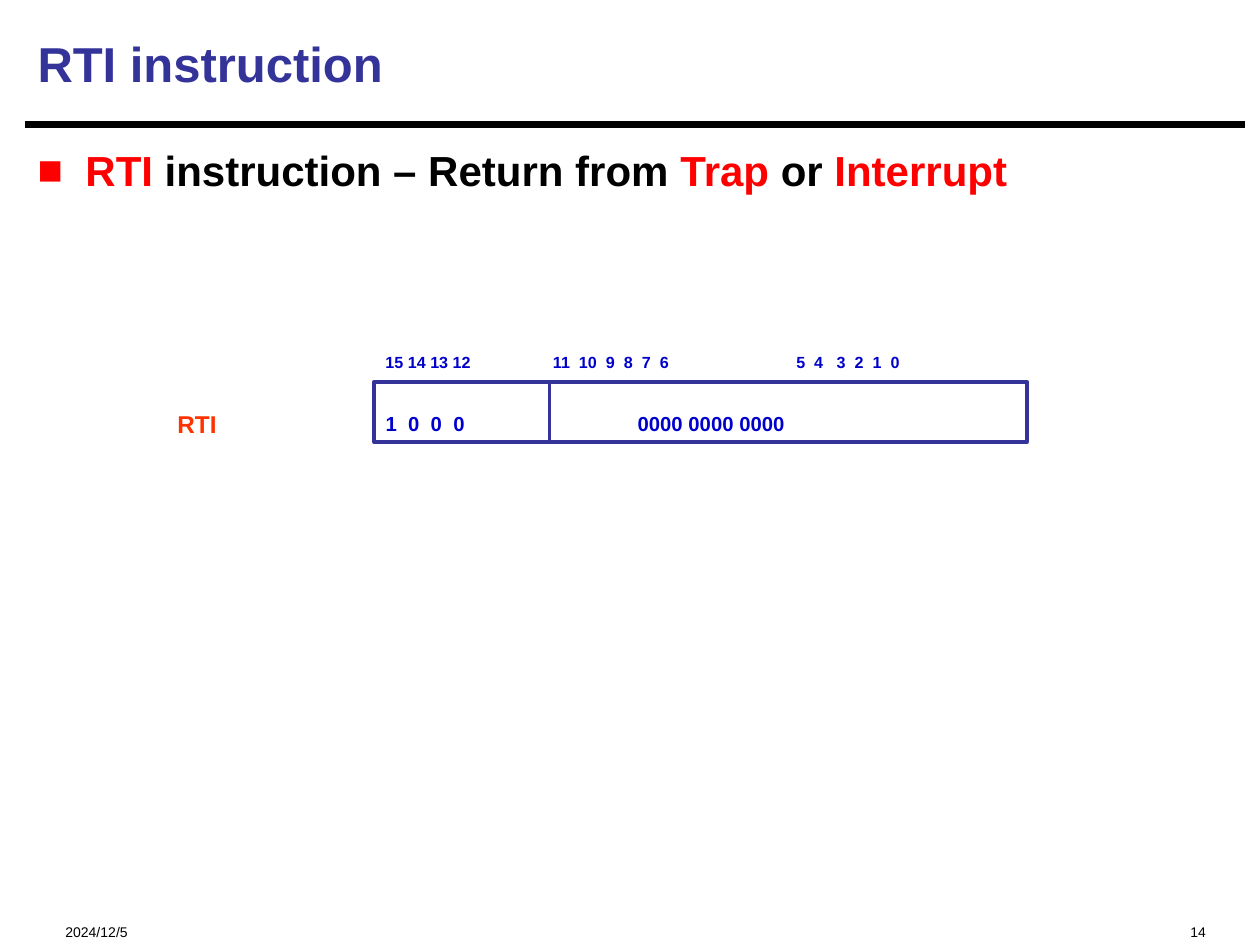
import dataclasses
import pptx
import pptx.util
import pptx.dml.color
import pptx.enum.shapes
import pptx.enum.text
import pptx.oxml
import lxml.etree

Inches = pptx.util.Inches
Anchor = pptx.enum.text.MSO_ANCHOR
Align = pptx.enum.text.PP_ALIGN


@dataclasses.dataclass(frozen=True)
class Theme:
    font: str = "Arial"
    navy: str = "333399"
    blue: str = "0000CC"
    red: str = "FF0000"
    orange: str = "FF3300"
    black: str = "000000"
    title: float = 28
    body: float = 24
    label: float = 13.9
    field: float = 11.6
    bits: float = 9.2
    footer: float = 8
    rule: float = 3.75
    frame: float = 2


class Deck:
    def __init__(self, theme):
        self.theme = theme
        self.prs = pptx.Presentation()
        self.prs.slide_width, self.prs.slide_height = Inches(10), Inches(7.5)
        self.s = self.prs.slides.add_slide(self.prs.slide_layouts[6])

    def color(self, value):
        return pptx.dml.color.RGBColor.from_string(value)

    def stroke(self, sp, color, width):
        sp.line.color.rgb = self.color(color)
        sp.line.width = pptx.util.Pt(width)

    def line(self, x1, y1, x2, y2, color, width):
        sp = self.s.shapes.add_connector(
            pptx.enum.shapes.MSO_CONNECTOR.STRAIGHT,
            Inches(x1), Inches(y1), Inches(x2), Inches(y2))
        self.stroke(sp, color, width)
        lxml.etree.SubElement(sp._element.spPr, pptx.oxml.ns.qn("a:effectLst"))

    def frame(self, x, y, w, h):
        sp = self.s.shapes.add_shape(
            pptx.enum.shapes.MSO_SHAPE.RECTANGLE,
            Inches(x), Inches(y), Inches(w), Inches(h))
        sp.shadow.inherit = False
        sp.fill.background()
        self.stroke(sp, self.theme.navy, self.theme.frame)

    def text(self, box, runs, size, color, bold=True, anchor=Anchor.BOTTOM,
             align=Align.LEFT, inset=0.1, wrap=True):
        tf = self.s.shapes.add_textbox(*map(Inches, box)).text_frame
        tf.word_wrap = wrap
        tf.vertical_anchor = anchor
        tf.margin_left = Inches(inset)
        if anchor == Anchor.BOTTOM:
            tf.margin_bottom = 0
        p = tf.paragraphs[0]
        p.alignment = align
        p.font.name = self.theme.font
        p.font.size = pptx.util.Pt(size)
        p.font.bold = bold
        p.font.color.rgb = self.color(color)
        for words, tint in [(runs, color)] if isinstance(runs, str) else runs:
            r = p.add_run()
            r.text = words
            r.font.name = self.theme.font
            r.font.size = pptx.util.Pt(size)
            r.font.bold = bold
            r.font.color.rgb = self.color(tint)
        return p

    def bullet(self, box, runs):
        p = self.text(box, runs, self.theme.body, self.theme.black,
                      anchor=Anchor.TOP)
        pPr = p._p.get_or_add_pPr()
        pPr.set("marL", str(Inches(0.38)))
        pPr.set("indent", str(-Inches(0.38)))
        ns = pptx.oxml.ns.nsdecls("a")
        marks = (
            f'<a:buClr {ns}><a:srgbClr val="{self.theme.red}"/></a:buClr>',
            f'<a:buFont {ns} typeface="{self.theme.font}"/>',
            f'<a:buChar {ns} char="■"/>',
        )
        for i, xml in enumerate(marks):
            pPr.insert(i, pptx.oxml.parse_xml(xml))


def main():
    t = Theme()
    d = Deck(t)
    d.line(0.2, 0.99, 9.88, 0.99, t.black, t.rule)
    d.text((0.42, 7.19, 2.5, 0.27), "2024/12/5", t.footer, t.black, bold=False)
    d.text((6.67, 7.19, 3, 0.27), "14", t.footer, t.black, bold=False,
           align=Align.RIGHT)
    d.text((0.2, 0.08, 9.67, 0.84), "RTI instruction", t.title, t.navy,
           anchor=Anchor.MIDDLE)
    d.bullet((0.2, 1.1, 9.67, 5.96), [
        ("RTI", t.red), (" instruction – Return from ", t.black),
        ("Trap", t.red), (" or ", t.black), ("Interrupt", t.red)])

    top, height, divider = 3.03, 0.48, 4.36
    d.frame(2.97, top, 5.18, height)
    d.line(divider, top, divider, top + height, t.navy, t.frame)
    for x, w, bits, inset in (
            (2.96, 1.42, "15 14 13 12", 0.1),
            (4.29, 1.97, "11  10  9  8  7  6", 0.1),
            (6.18, 1.97, "5  4   3  2  1  0", 0.14)):
        d.text((x, 2.58, w, 0.37), bits, t.bits, t.blue, inset=inset)
    for x, w, value, inset in (
            (2.87, 1.43, "1  0  0  0", 0.19),
            (4.37, 3.78, "0000 0000 0000", 0.69)):
        d.text((x, top, w, 0.43), value, t.field, t.blue, inset=inset)
    d.text((1.31, 2.97, 0.74, 0.51), "RTI", t.label, t.orange)
    d.prs.save("out.pptx")


if __name__ == "__main__":
    main()
